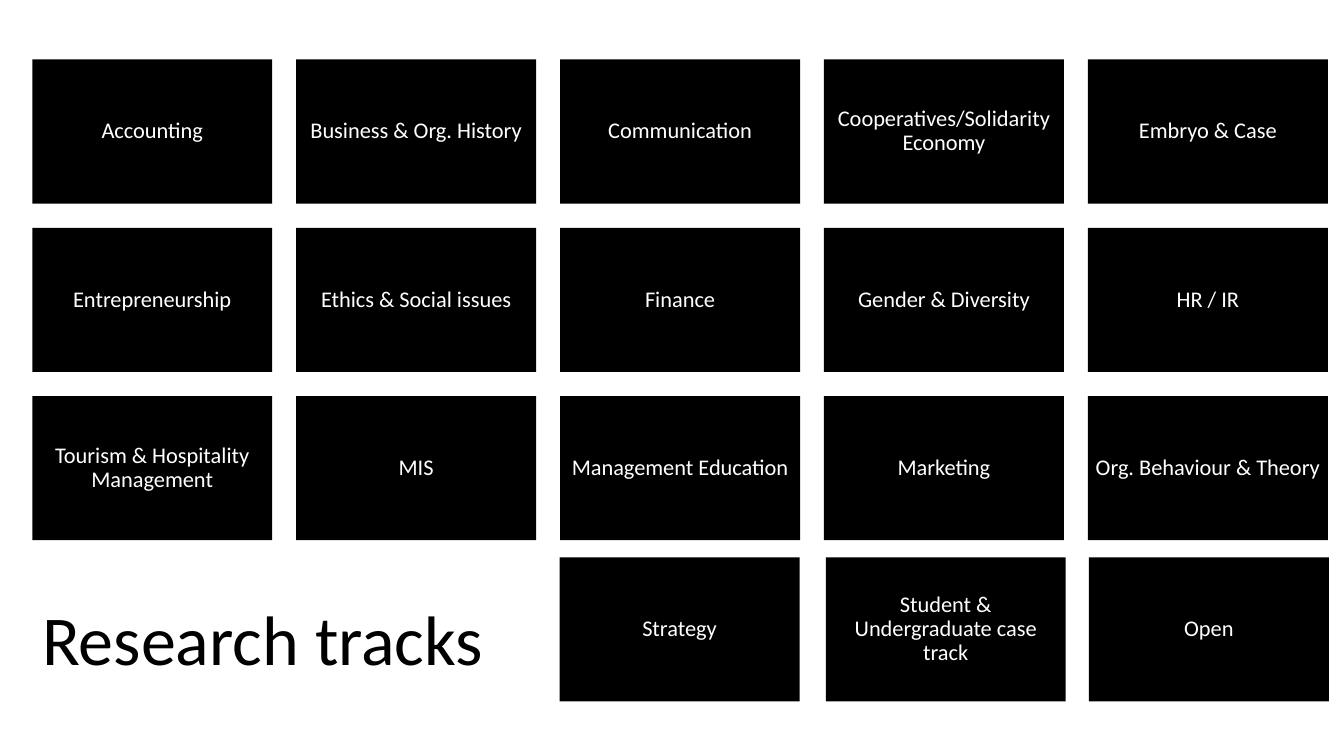
from pptx import Presentation
from pptx import util as u
from pptx.dml.color import RGBColor
from pptx.enum import shapes, text

COLORS = {"tile": "000000", "label": "FFFFFF", "title": "000000"}
TILE_W, TILE_H = 2.38, 1.43
LEFT, TOP = 0.32, 0.59
STEP_X, STEP_Y = 2.6175, 1.67

prs = Presentation()
prs.slide_width = u.Inches(13.33)
prs.slide_height = u.Inches(7.5)
s = prs.slides.add_slide(prs.slide_layouts[6])


def write(sp, content, size, color, align, inset_x=0.1, inset_y=0.05):
    tf = sp.text_frame
    tf.word_wrap = True
    tf.vertical_anchor = text.MSO_ANCHOR.MIDDLE
    tf.margin_left = tf.margin_right = u.Inches(inset_x)
    tf.margin_top = tf.margin_bottom = u.Inches(inset_y)
    p = tf.paragraphs[0]
    p.alignment = align
    p.line_spacing = 0.9
    r = p.add_run()
    r.text = content
    r.font.name = "Calibri"
    r.font.size = u.Pt(size)
    r.font.color.rgb = RGBColor.from_string(COLORS[color])


track_rows = [
    ["Accounting", "Business & Org. History", "Communication",
     "Cooperatives/Solidarity Economy", "Embryo & Case"],
    ["Entrepreneurship", "Ethics & Social issues", "Finance",
     "Gender & Diversity", "HR / IR"],
    ["Tourism & Hospitality Management", "MIS", "Management Education",
     "Marketing", "Org. Behaviour & Theory"],
]
tracks = [
    (LEFT + col * STEP_X, TOP + row * STEP_Y, name)
    for row, names in enumerate(track_rows)
    for col, name in enumerate(names)
]
tracks += [
    (5.55, 5.53, "Strategy"),
    (8.19, 5.53, "Student & Undergraduate case track"),
    (10.8, 5.53, "Open"),
]

for x, y, name in tracks:
    sp = s.shapes.add_shape(shapes.MSO_SHAPE.RECTANGLE, u.Inches(x), u.Inches(y),
                            u.Inches(TILE_W), u.Inches(TILE_H))
    sp.shadow.inherit = False
    sp.fill.solid()
    sp.fill.fore_color.rgb = RGBColor.from_string(COLORS["tile"])
    sp.line.fill.background()
    write(sp, name, size=16, color="label", align=text.PP_ALIGN.CENTER,
          inset_x=0.07, inset_y=0.07)

title = s.shapes.add_textbox(u.Inches(LEFT), u.Inches(5.47), u.Inches(4.8), u.Inches(1.82))
write(title, "Research tracks", size=50, color="title", align=text.PP_ALIGN.LEFT)

prs.save("out.pptx")
